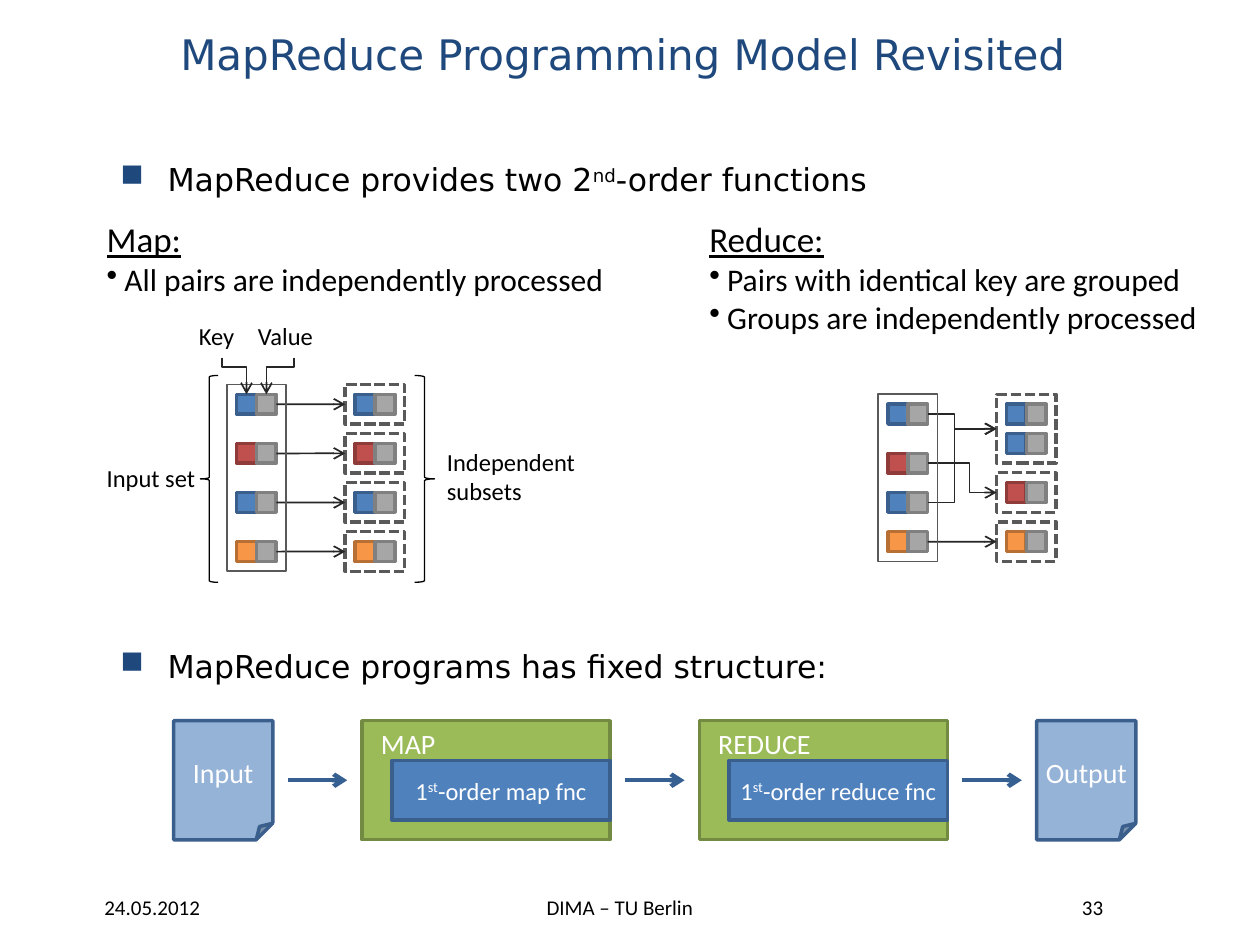
from dataclasses import dataclass

from lxml import etree
from pptx import Presentation
from pptx.dml.color import RGBColor
from pptx.enum.dml import MSO_LINE
from pptx.enum.shapes import MSO_CONNECTOR, MSO_SHAPE
from pptx.enum.text import MSO_ANCHOR, MSO_AUTO_SIZE, PP_ALIGN
from pptx.oxml.ns import qn
from pptx.util import Cm, Pt

RECT, FOLDED = MSO_SHAPE.RECTANGLE, MSO_SHAPE.FOLDED_CORNER
LEFT_BRACE, RIGHT_BRACE = MSO_SHAPE.LEFT_BRACE, MSO_SHAPE.RIGHT_BRACE
STRAIGHT, ELBOW = MSO_CONNECTOR.STRAIGHT, MSO_CONNECTOR.ELBOW
LEFT, CENTER = PP_ALIGN.LEFT, PP_ALIGN.CENTER
TOP, MIDDLE = MSO_ANCHOR.TOP, MSO_ANCHOR.MIDDLE
SIDE_LEFT, SIDE_RIGHT = 1, 3


@dataclass(frozen=True)
class Theme:
    head_font: str = "DejaVu Sans"
    font: str = "Calibri"
    title: int = 24
    heading: int = 20
    body: int = 18
    box: int = 16
    label: int = 14
    footer: int = 12
    navy: str = "1F497D"
    black: str = "000000"
    white: str = "FFFFFF"
    frame: str = "595959"
    arrow: str = "262626"
    flow_arrow: str = "376092"
    # fill and outline
    blue: tuple = ("4F81BD", "3A5F8C")
    red: tuple = ("C0504D", "8E3B39")
    orange: tuple = ("F79646", "B76F34")
    grey: tuple = ("A6A6A6", "808080")
    green: tuple = ("9BBB59", "738A42")
    paper: tuple = ("95B3D7", "3A5F8C")


T = Theme()
CELL, PAD = 0.4, 0.2  # key or value square, and the margin around a pair


def rgb(value):
    return RGBColor.from_string(value)


def add_bullet(p, char, indent, color):
    pPr = p._p.get_or_add_pPr()
    pPr.set("marL", str(Cm(indent)))
    pPr.set("indent", str(-Cm(indent)))
    clr = etree.SubElement(pPr, qn("a:buClr"))
    etree.SubElement(clr, qn("a:srgbClr")).set("val", color)
    etree.SubElement(pPr, qn("a:buChar")).set("char", char)


def write(tf, text, size=T.label, color=T.black, font=T.font, align=LEFT,
          underline=False, bullet=None, indent=0, bullet_color=T.black,
          before=0, more=False):
    """Write one paragraph; text between ^ marks is superscript."""
    p = tf.add_paragraph() if more else tf.paragraphs[0]
    p.alignment = align
    if bullet:
        add_bullet(p, bullet, indent, bullet_color)
    if before:
        p.space_before = Pt(before)
    for i, part in enumerate(text.split("^")):
        r = p.add_run()
        r.text = part
        r.font.size, r.font.name = Pt(size), font
        r.font.color.rgb = rgb(color)
        if underline:
            r.font.underline = True
        if i % 2:
            r._r.get_or_add_rPr().set("baseline", "30000")


def add_text(slide, x, y, w, h, text, anchor=TOP, **fmt):
    tf = slide.shapes.add_textbox(Cm(x), Cm(y), Cm(w), Cm(h)).text_frame
    tf.word_wrap = True
    tf.vertical_anchor = anchor
    write(tf, text, **fmt)
    return tf


def add_box(slide, x, y, w, h, fill=None, line=T.frame, width=2, kind=RECT,
            dashed=False):
    sp = slide.shapes.add_shape(kind, Cm(x), Cm(y), Cm(w), Cm(h))
    sp.shadow.inherit = False
    if fill:
        sp.fill.solid()
        sp.fill.fore_color.rgb = rgb(fill)
    else:
        sp.fill.background()
    sp.line.color.rgb = rgb(line)
    sp.line.width = Pt(width)
    if dashed:
        sp.line.dash_style = MSO_LINE.SQUARE_DOT
    return sp


def add_label_box(slide, x, y, w, h, colors, text, kind=RECT, anchor=MIDDLE,
                  inset=0, **fmt):
    sp = add_box(slide, x, y, w, h, *colors, kind=kind)
    tf = sp.text_frame
    tf.word_wrap = True
    tf.margin_left, tf.margin_right = Cm(inset), 0
    tf.vertical_anchor = anchor
    write(tf, text, color=T.white, **fmt)


def add_arrow(slide, x1, y1, x2, y2, color=T.arrow, width=1, bend=None):
    """Arrow between two points; bend is where an elbow turns, in percent."""
    kind = STRAIGHT if bend is None else ELBOW
    cxn = slide.shapes.add_connector(kind, x1, y1, x2, y2)
    cxn.line.color.rgb = rgb(color)
    cxn.line.width = Pt(width)
    etree.SubElement(cxn.line._get_or_add_ln(), qn("a:tailEnd")).set("type", "arrow")
    spPr = cxn._element.spPr
    etree.SubElement(spPr, qn("a:effectLst"))
    if bend is not None:
        guides = spPr.find(qn("a:prstGeom")).get_or_add_avLst()
        gd = etree.SubElement(guides, qn("a:gd"))
        gd.set("name", "adj1")
        gd.set("fmla", f"val {bend * 1000}")
    return cxn


def join(slide, source, target, bend=None):
    cxn = add_arrow(slide, source.left + source.width,
                    source.top + source.height // 2,
                    target.left, target.top + target.height // 2, bend=bend)
    cxn.begin_connect(source, SIDE_RIGHT)
    cxn.end_connect(target, SIDE_LEFT)


def add_pointer(slide, x1, y1, x2, y2):
    """Elbow that leaves downwards: a sideways elbow turned by a quarter."""
    w, h = y2 - y1, abs(x2 - x1)
    left, top = (x1 + x2 - w) / 2, (y1 + y2 - h) / 2
    cxn = add_arrow(slide, Cm(left), Cm(top), Cm(left + w), Cm(top + h), bend=25)
    xfrm = cxn._element.spPr.find(qn("a:xfrm"))
    xfrm.set("rot", str((270 if x2 > x1 else 90) * 60000))
    if x2 > x1:
        xfrm.set("flipH", "1")


def add_pair(slide, x, y, colors):
    """Key and value squares; returns the value square."""
    add_box(slide, x, y, CELL, CELL, *colors)
    return add_box(slide, x + CELL, y, CELL, CELL, *T.grey)


def add_group(slide, x, y, pair_tops, **fmt):
    """Frame around a column of pairs whose tops are given."""
    height = pair_tops[-1] + CELL + PAD - y
    return add_box(slide, x, y, 2 * CELL + 2 * PAD, height, **fmt)


def add_map_diagram(slide):
    left, right, top, pitch = 4.57, 6.96, 7.95, 0.99
    tops = [top + i * pitch for i in range(4)]
    for y, colors in zip(tops, (T.blue, T.red, T.blue, T.orange)):
        value = add_pair(slide, left + PAD, y, colors)
        add_pair(slide, right + PAD, y, colors)
        join(slide, value, add_group(slide, right, y - PAD, [y], dashed=True))
    add_group(slide, left, top - PAD, tops, width=1)
    for x, w, kind in ((4.04, 0.36, LEFT_BRACE), (8.36, 0.4, RIGHT_BRACE)):
        add_box(slide, x, 7.57, w, 4.17, line=T.black, width=0.75, kind=kind)
    for x, y, w, h, text in ((1.9, 9.2, 3.38, 0.86, "Input set"),
                             (8.76, 8.88, 3.96, 1.45, "Independent subsets"),
                             (3.76, 6.35, 1.47, 0.86, "Key"),
                             (4.95, 6.35, 1.96, 0.86, "Value")):
        add_text(slide, x, y, w, h, text)
    add_pointer(slide, 4.47, 7.21, 4.97, top)
    add_pointer(slide, 5.92, 7.21, 5.37, top)


def add_reduce_diagram(slide):
    left, right = 17.7, 20.09
    tops = (8.15, 9.14, 9.93, 10.72)
    values = [add_pair(slide, left + PAD, y, colors) for y, colors in
              zip(tops, (T.blue, T.red, T.blue, T.orange))]
    groups = []
    for colors, rows in ((T.blue, (8.15, 8.74)), (T.red, (9.73,)),
                         (T.orange, (10.72,))):
        for y in rows:
            add_pair(slide, right + PAD, y, colors)
        groups.append(add_group(slide, right, rows[0] - PAD, rows, dashed=True))
    for value, group, bend in zip(values, (0, 1, 0, 2), (39, 61, 39, None)):
        join(slide, value, groups[group], bend)
    add_group(slide, left, tops[0] - PAD, tops, width=1)


def add_program_flow(slide):
    x, y, h, gap, inset = 3.5, 14.53, 2.4, 1.8, 0.3
    steps = (("Input", None), ("MAP", "1^st^-order map fnc"),
             ("REDUCE", "1^st^-order reduce fnc"), ("Output", None))
    for i, (name, function) in enumerate(steps):
        w = 5 if function else 2
        if i:
            add_arrow(slide, Cm(x - gap + inset), Cm(y + h / 2), Cm(x - inset),
                      Cm(y + h / 2), color=T.flow_arrow, width=2.5)
        if function:
            add_label_box(slide, x, y, w, h, T.green, name, anchor=TOP,
                          inset=0.38, size=T.box)
            add_label_box(slide, x + 0.6, y + 0.8, w - 0.6, h / 2, T.blue,
                          function, align=CENTER)
        else:
            add_label_box(slide, x, y, w, h, T.paper, name, kind=FOLDED,
                          align=CENTER, size=T.box)
        x += w + gap


def add_title(slide, text):
    sp = slide.shapes.title
    sp.left, sp.top, sp.width, sp.height = Cm(3.38), Cm(0.2), Cm(19.05), Cm(1.78)
    tf = sp.text_frame
    tf.auto_size = MSO_AUTO_SIZE.NONE
    tf.vertical_anchor = MIDDLE
    write(tf, text, size=T.title, color=T.navy, font=T.head_font)


def main():
    prs = Presentation()
    prs.slide_width, prs.slide_height = Cm(25.4), Cm(19.05)
    slide = prs.slides.add_slide(prs.slide_layouts[5])
    add_title(slide, "MapReduce Programming Model Revisited")

    point = dict(size=T.body, font=T.head_font, bullet="■", indent=0.95,
                 bullet_color=T.navy)
    tf = add_text(slide, 2.18, 3.1, 22.8, 14,
                  "MapReduce provides two 2^nd^-order functions", **point)
    write(tf, "MapReduce programs has fixed structure:", before=257, more=True,
          **point)

    add_program_flow(slide)
    add_map_diagram(slide)
    add_reduce_diagram(slide)
    for x, w, h, heading, notes in (
            (1.9, 10.64, 1.88, "Map:", ["All pairs are independently processed"]),
            (14.05, 10.46, 2.64, "Reduce:", ["Pairs with identical key are grouped",
                                             "Groups are independently processed"])):
        tf = add_text(slide, x, 4.27, w, h, heading, size=T.heading, underline=True)
        for note in notes:
            write(tf, note, size=T.body, bullet="•", indent=0.36, more=True)
    for x, w, text in ((1.19, 3.76, "24.05.2012"), (9.32, 6.35, "DIMA – TU Berlin"),
                       (19.84, 4.37, "33")):
        add_text(slide, x, 17.91, w, 0.76, text, anchor=MIDDLE, size=T.footer,
                 align=CENTER)
    prs.save("out.pptx")


if __name__ == "__main__":
    main()
